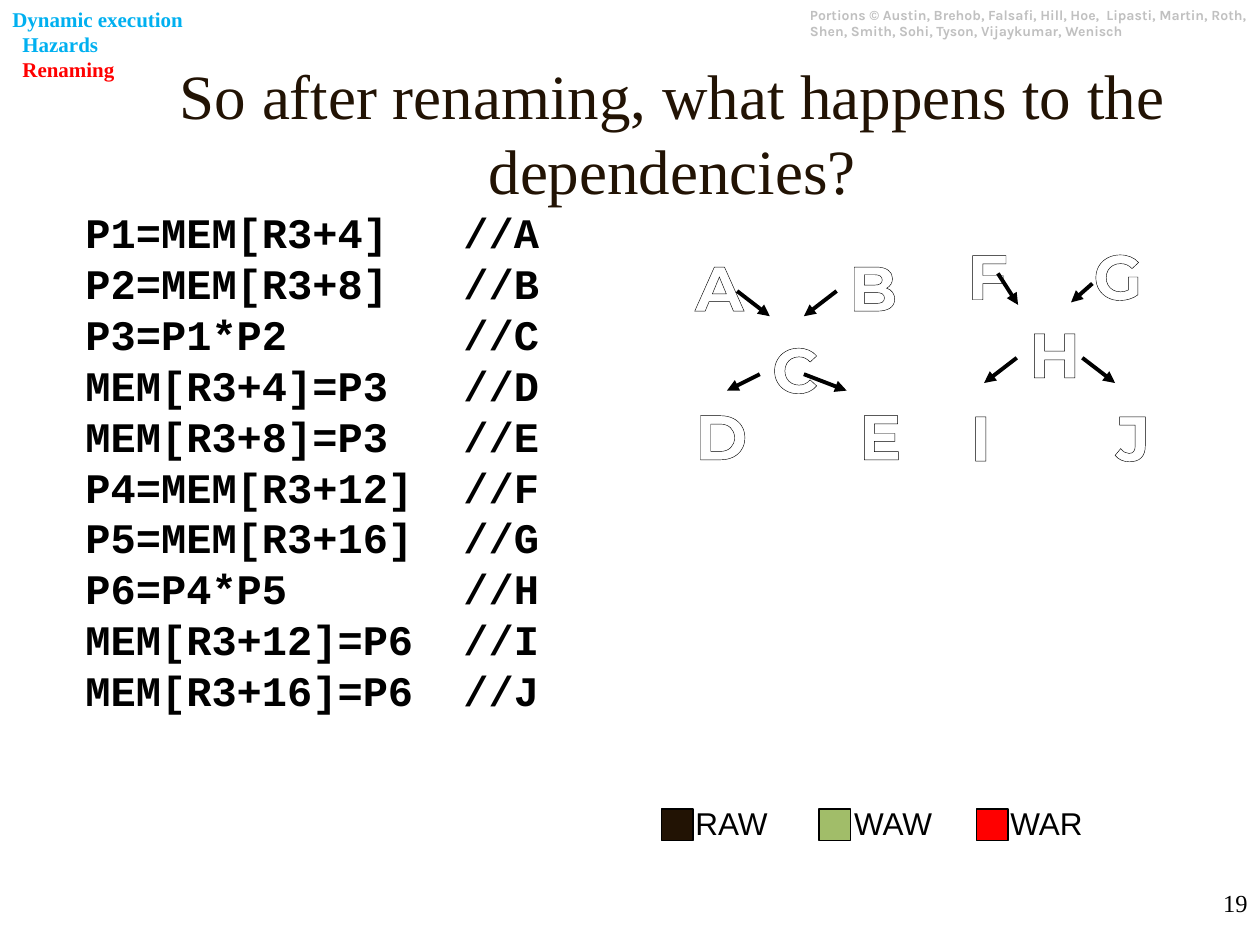
from dataclasses import dataclass

from lxml.etree import SubElement
from pptx import Presentation
from pptx.dml.color import RGBColor
from pptx.enum.shapes import MSO_CONNECTOR, MSO_SHAPE
from pptx.enum.text import MSO_ANCHOR, MSO_AUTO_SIZE, PP_ALIGN
from pptx.oxml.ns import qn
from pptx.util import Inches, Pt

BLACK, WHITE, BROWN, RED, BLUE = "000000", "FFFFFF", "221304", "FF0000", "00B0F0"
SERIF = "Times New Roman"


@dataclass
class Style:
    font: str
    size: float
    color: str = BLACK
    bold: bool = False


@dataclass
class Node:
    letter: str
    left: float
    top: float
    width: float = 0.4


@dataclass
class Arrow:
    x1: float
    y1: float
    x2: float
    y2: float


def rgb(value: str) -> RGBColor:
    return RGBColor.from_string(value)


def apply_style(font, style: Style) -> None:
    font.name, font.size, font.bold = style.font, Pt(style.size), style.bold
    font.color.rgb = rgb(style.color)


def add_tabs(paragraph, stops: list[float]) -> None:
    tab_list = SubElement(paragraph._p.get_or_add_pPr(), qn("a:tabLst"))
    for stop in stops:
        SubElement(tab_list, qn("a:tab"), pos=str(Inches(stop)), algn="l")


def add_text(slide, box: tuple, lines: list[str], style: Style,
             wrap: bool = True, tabs: list[float] = ()) -> list:
    """Add a text box and return its paragraphs, one for each line."""
    frame = slide.shapes.add_textbox(*map(Inches, box)).text_frame
    frame.word_wrap = wrap
    frame.text = "\n".join(lines)
    for paragraph in frame.paragraphs:
        if tabs:
            add_tabs(paragraph, tabs)
        apply_style(paragraph.font, style)
    return list(frame.paragraphs)


def add_node(slide, node: Node) -> None:
    style = Style("Montserrat", 36, WHITE, True)
    paragraph, = add_text(slide, (node.left, node.top, node.width, 0.39),
                          [node.letter], style, wrap=False)
    paragraph.alignment = PP_ALIGN.CENTER
    letter = paragraph.runs[0]
    # Black outline around the white letter; it must precede the fill
    outline = SubElement(letter._r.get_or_add_rPr(), qn("a:ln"), w=str(Pt(0.75)))
    fill = SubElement(outline, qn("a:solidFill"))
    SubElement(fill, qn("a:srgbClr"), val=BLACK)
    apply_style(letter.font, style)


def add_arrow(slide, arrow: Arrow) -> None:
    ends = map(Inches, (arrow.x1, arrow.y1, arrow.x2, arrow.y2))
    connector = slide.shapes.add_connector(MSO_CONNECTOR.STRAIGHT, *ends)
    connector.line.color.rgb = rgb(BLACK)
    connector.line.width = Pt(2.25)
    properties = connector._element.spPr
    SubElement(properties.find(qn("a:ln")), qn("a:tailEnd"), type="triangle")
    SubElement(properties, qn("a:effectLst"))


def add_swatch(slide, left: float, color: str) -> None:
    swatch = slide.shapes.add_shape(
        MSO_SHAPE.RECTANGLE, *map(Inches, (left, 6.42, 0.25, 0.25)))
    swatch.shadow.inherit = False
    swatch.fill.solid()
    swatch.fill.fore_color.rgb = rgb(color)
    swatch.line.color.rgb = rgb(BLACK)
    swatch.line.width = Pt(0.75)


CODE = [
    "P1=MEM[R3+4]", "P2=MEM[R3+8]", "P3=P1*P2", "MEM[R3+4]=P3", "MEM[R3+8]=P3",
    "P4=MEM[R3+12]", "P5=MEM[R3+16]", "P6=P4*P5", "MEM[R3+12]=P6", "MEM[R3+16]=P6",
]
NODES = [
    Node("A", 5.42, 1.92), Node("B", 6.64, 1.92), Node("C", 6.03, 2.57),
    Node("D", 5.42, 3.1), Node("E", 6.72, 3.1),
    Node("F", 7.58, 1.83), Node("G", 8.58, 1.83), Node("H", 8.07, 2.45),
    Node("I", 7.63, 3.11, 0.17), Node("J", 8.76, 3.11),
]
ARROWS = [
    Arrow(5.85, 2.31, 6.11, 2.51), Arrow(6.64, 2.31, 6.38, 2.51),
    Arrow(6.03, 2.97, 5.77, 3.1), Arrow(6.38, 2.97, 6.72, 3.1),
    Arrow(7.92, 2.17, 8.08, 2.42), Arrow(8.67, 2.25, 8.5, 2.4),
    Arrow(8.07, 2.84, 7.81, 3.04), Arrow(8.59, 2.84, 8.85, 3.04),
]
LEGEND = {"RAW": BROWN, "WAW": "A1BD69", "WAR": RED}


def main() -> None:
    prs = Presentation()
    prs.slide_width, prs.slide_height = Inches(10), Inches(7.5)
    slide = prs.slides.add_slide(prs.slide_layouts[5])

    # Title
    title = slide.shapes.title
    title.left, title.top, title.width, title.height = map(
        Inches, (1.17, 0.42, 8.33, 1.25))
    heading = title.text_frame
    heading.text = "So after renaming, what happens to the dependencies?"
    heading.auto_size = MSO_AUTO_SIZE.NONE
    heading.vertical_anchor = MSO_ANCHOR.MIDDLE
    heading.paragraphs[0].alignment = PP_ALIGN.CENTER
    apply_style(heading.paragraphs[0].font, Style(SERIF, 36, BROWN))

    # Credits and page number
    add_text(slide, (6.33, 0, 3.67, 0.37),
             ["Portions © Austin, Brehob, Falsafi, Hill, Hoe,  Lipasti, Martin, "
              "Roth, Shen, Smith, Sohi, Tyson, Vijaykumar, Wenisch"],
             Style("Karla", 8, "C0C0C0", True))
    page_number, = add_text(slide, (7.92, 7, 2.08, 0.5), ["19"], Style(SERIF, 14))
    page_number.alignment = PP_ALIGN.RIGHT

    # Renamed code, each instruction labelled with its letter
    instructions = [f"{code}\t//{node.letter}" for code, node in zip(CODE, NODES)]
    for line in add_text(slide, (0.58, 1.67, 4.08, 4.17), instructions,
                         Style("Courier New", 24, bold=True), tabs=[3]):
        line.line_spacing = 0.8
        line.space_before = Pt(6)

    # Dependency graphs
    for node in NODES:
        add_node(slide, node)
    for arrow in ARROWS:
        add_arrow(slide, arrow)

    # Legend
    add_text(slide, (5.42, 6.33, 3.92, 0.4), ["\t".join(LEGEND)],
             Style("Arial", 18), tabs=[1.26, 2.5])
    for index, color in enumerate(LEGEND.values()):
        add_swatch(slide, 5.25 + 1.25 * index, color)

    # Topic outline
    topic, *subtopics = add_text(
        slide, (0, 0, 1.57, 0.71), ["Dynamic execution", "Hazards", "Renaming"],
        Style(SERIF, 12, BLUE, True), wrap=False)
    for subtopic in subtopics:
        subtopic._p.get_or_add_pPr().set("marL", str(Inches(0.08)))
    subtopics[-1].font.color.rgb = rgb(RED)

    prs.save("out.pptx")


if __name__ == "__main__":
    main()
